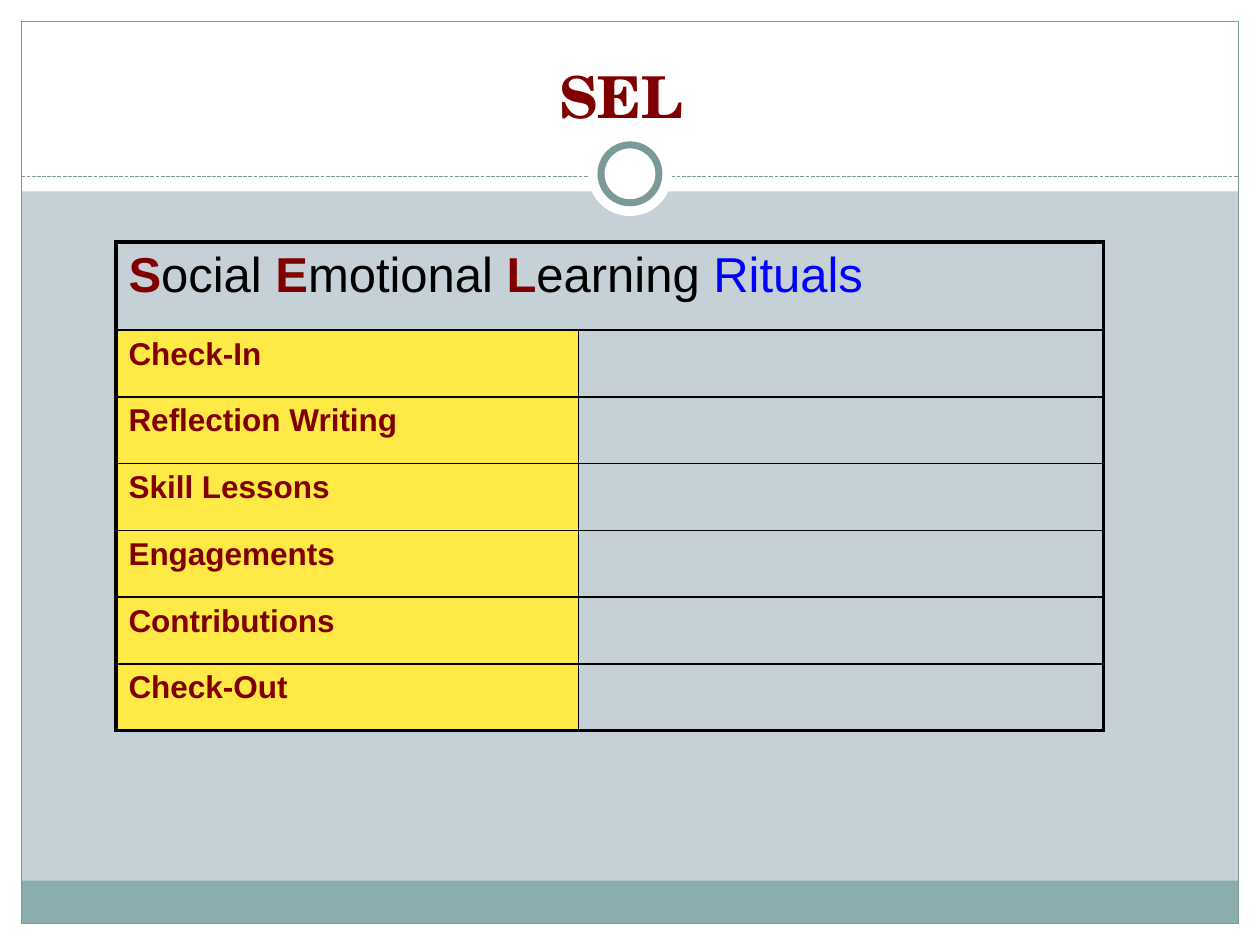
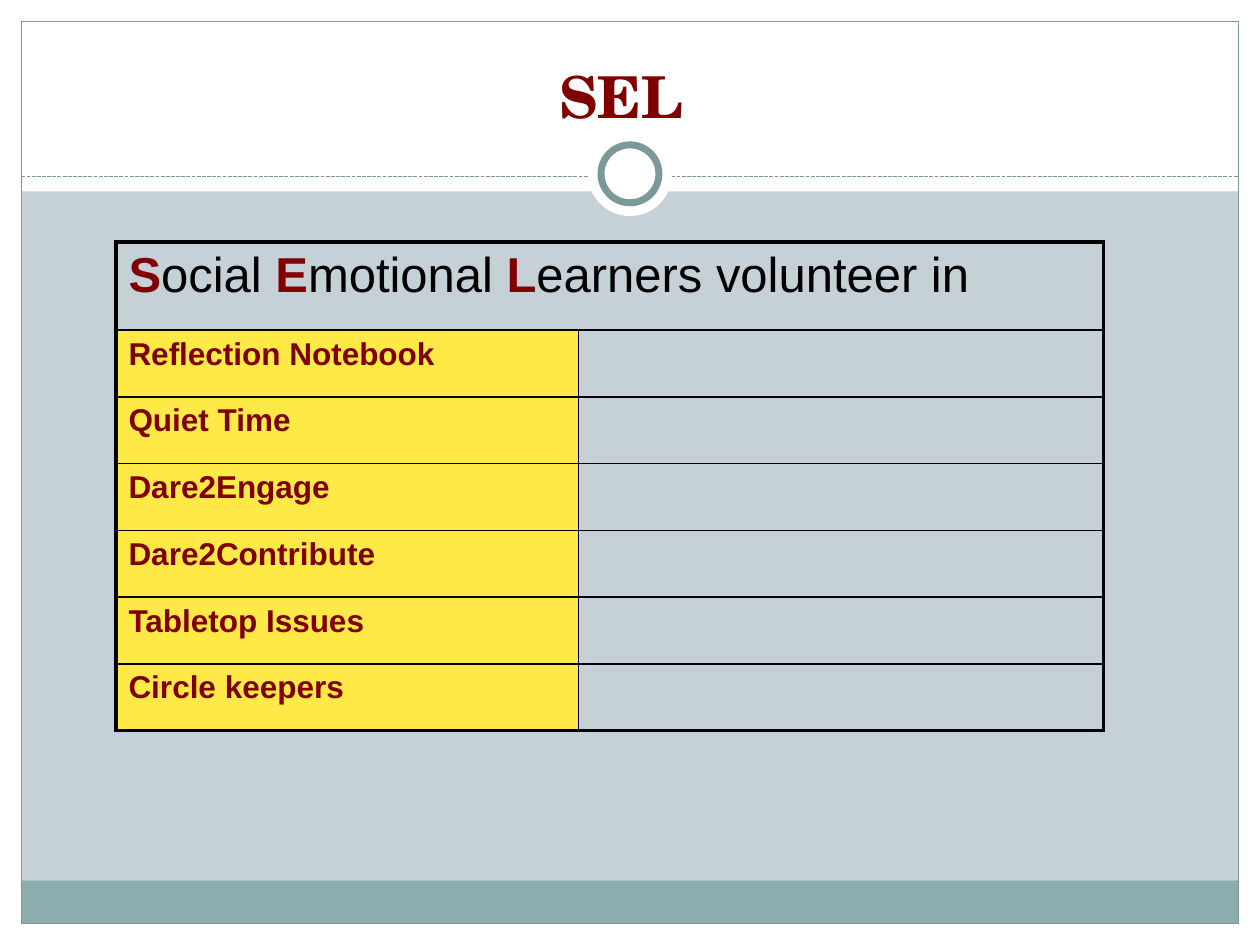
from dataclasses import dataclass

from lxml import etree
from pptx import Presentation
from pptx.dml.color import RGBColor
from pptx.enum.dml import MSO_LINE
from pptx.enum.shapes import MSO_CONNECTOR, MSO_SHAPE
from pptx.enum.text import MSO_ANCHOR, PP_ALIGN
from pptx.oxml.ns import qn
from pptx.util import Inches, Pt

RECT, OVAL = MSO_SHAPE.RECTANGLE, MSO_SHAPE.OVAL
LEFT, CENTER = PP_ALIGN.LEFT, PP_ALIGN.CENTER
BOTTOM = MSO_ANCHOR.BOTTOM
STRAIGHT = MSO_CONNECTOR.STRAIGHT
DASH = MSO_LINE.SQUARE_DOT


@dataclass(frozen=True)
class Theme:
    back: str = "C5D1D7"
    white: str = "FFFFFF"
    band: str = "8CADAE"
    trim: str = "7C999A"
    black: str = "000000"
    maroon: str = "800000"
    blue: str = "0000FF"
    yellow: str = "FFE947"
    serif: str = "TeX Gyre Schola"
    sans: str = "Arial"
    title: int = 33
    head: int = 28
    label: int = 18
    thin: float = 1
    thick: float = 2.25


THEME = Theme()
WIDE, HIGH, EDGE = 10, 7.5, 0.17
COLS = (3.67, 4.17)
HEAD_ROW, BODY_ROW = 0.7, 0.53

SOCIAL = [("S", THEME.maroon, True), ("ocial ", THEME.black, False),
          ("E", THEME.maroon, True), ("motional ", THEME.black, False),
          ("L", THEME.maroon, True)]
PAGES = [
    (SOCIAL + [("earning ", THEME.black, False), ("Rituals", THEME.blue, False)],
     ["Check-In", "Reflection Writing", "Skill Lessons",
      "Engagements", "Contributions", "Check-Out"]),
    (SOCIAL + [("earners volunteer in", THEME.black, False)],
     ["Reflection Notebook", "Quiet Time", "Dare2Engage",
      "Dare2Contribute", "Tabletop Issues", "Circle keepers"]),
]


def rgb(code):
    return RGBColor.from_string(code)


def write(frame, text, size, font=THEME.sans, color=THEME.maroon, bold=True,
          align=LEFT):
    """Fill a frame with a string, or with (text, color, bold) runs."""
    para = frame.paragraphs[0]
    para.alignment = align
    runs = [(text, color, bold)] if isinstance(text, str) else text
    for part, shade, heavy in runs:
        run = para.add_run()
        run.text = part
        run.font.name = font
        run.font.size = Pt(size)
        run.font.bold = heavy
        run.font.color.rgb = rgb(shade)


def add_form(slide, kind, x, y, w, h, fill=None, line=None, weight=0.75):
    form = slide.shapes.add_shape(kind, Inches(x), Inches(y), Inches(w), Inches(h))
    form.shadow.inherit = False
    if fill:
        form.fill.solid()
        form.fill.fore_color.rgb = rgb(fill)
    else:
        form.fill.background()
    if line:
        form.line.color.rgb = rgb(line)
        form.line.width = Pt(weight)
    else:
        form.line.fill.background()


def add_rule(slide, y):
    rule = slide.shapes.add_connector(
        STRAIGHT, Inches(EDGE), Inches(y), Inches(WIDE - EDGE), Inches(y))
    rule.line.color.rgb = rgb(THEME.trim)
    rule.line.width = Pt(0.75)
    rule.line.dash_style = DASH
    etree.SubElement(rule._element.spPr, qn("a:effectLst"))


def add_ring(slide, x, y):
    """Draw a white disc with a ring, centred on x, y."""
    for size, line in ((0.67, None), (0.46, THEME.trim)):
        add_form(slide, OVAL, x - size / 2, y - size / 2, size, size,
                 fill=THEME.white, line=line, weight=4)


def add_frame(slide):
    slide.background.fill.solid()
    slide.background.fill.fore_color.rgb = rgb(THEME.back)
    for x, y, w, h in ((0, HIGH - EDGE, WIDE, EDGE), (0, 0, WIDE, 1.52),
                       (0, 0, EDGE, HIGH), (WIDE - EDGE, 0, EDGE, HIGH)):
        add_form(slide, RECT, x, y, w, h, fill=THEME.white)
    inner = WIDE - 2 * EDGE
    add_form(slide, RECT, EDGE, 6.99, inner, 0.34, fill=THEME.band)
    add_form(slide, RECT, EDGE, EDGE, inner, HIGH - 2 * EDGE, line=THEME.trim)
    add_rule(slide, 1.4)
    add_ring(slide, WIDE / 2, 1.38)


def add_title(slide, text):
    box = slide.shapes.add_textbox(Inches(0.33), Inches(0.25),
                                   Inches(9.33), Inches(0.83))
    frame = box.text_frame
    frame.word_wrap = True
    frame.vertical_anchor = BOTTOM
    write(frame, text, THEME.title, font=THEME.serif, align=CENTER)


def set_edges(cell, **outer):
    """Rule all four sides, thick where the side is on the table's rim."""
    props = cell._tc.get_or_add_tcPr()
    for side in "LRTB":
        weight = THEME.thick if outer[side] else THEME.thin
        line = etree.SubElement(props, qn(f"a:ln{side}"), w=str(Pt(weight)))
        fill = etree.SubElement(line, qn("a:solidFill"))
        etree.SubElement(fill, qn("a:srgbClr"), val=THEME.black)


def add_grid(slide, head, labels):
    count = len(labels) + 1
    heights = [HEAD_ROW] + [BODY_ROW] * len(labels)
    table = slide.shapes.add_table(
        count, len(COLS), Inches(0.92), Inches(1.92),
        Inches(sum(COLS)), Inches(sum(heights))).table
    table.first_row = table.horz_banding = False
    for col, width in zip(table.columns, COLS):
        col.width = Inches(width)
    for row, height in zip(table.rows, heights):
        row.height = Inches(height)
    table.cell(0, 0).merge(table.cell(0, 1))
    for r in range(count):
        for c in range(len(COLS)):
            cell = table.cell(r, c)
            set_edges(cell, L=c == 0, R=c == 1 or r == 0,
                      T=r == 0, B=r == count - 1)
            if r and c == 0:
                cell.fill.solid()
                cell.fill.fore_color.rgb = rgb(THEME.yellow)
            else:
                cell.fill.background()
    write(table.cell(0, 0).text_frame, head, THEME.head)
    for r, label in enumerate(labels, 1):
        write(table.cell(r, 0).text_frame, label, THEME.label)


def main():
    deck = Presentation()
    deck.slide_width, deck.slide_height = Inches(WIDE), Inches(HIGH)
    for head, labels in PAGES:
        slide = deck.slides.add_slide(deck.slide_layouts[6])
        add_frame(slide)
        add_title(slide, "SEL ")
        add_grid(slide, head, labels)
    deck.save("out.pptx")


if __name__ == "__main__":
    main()
